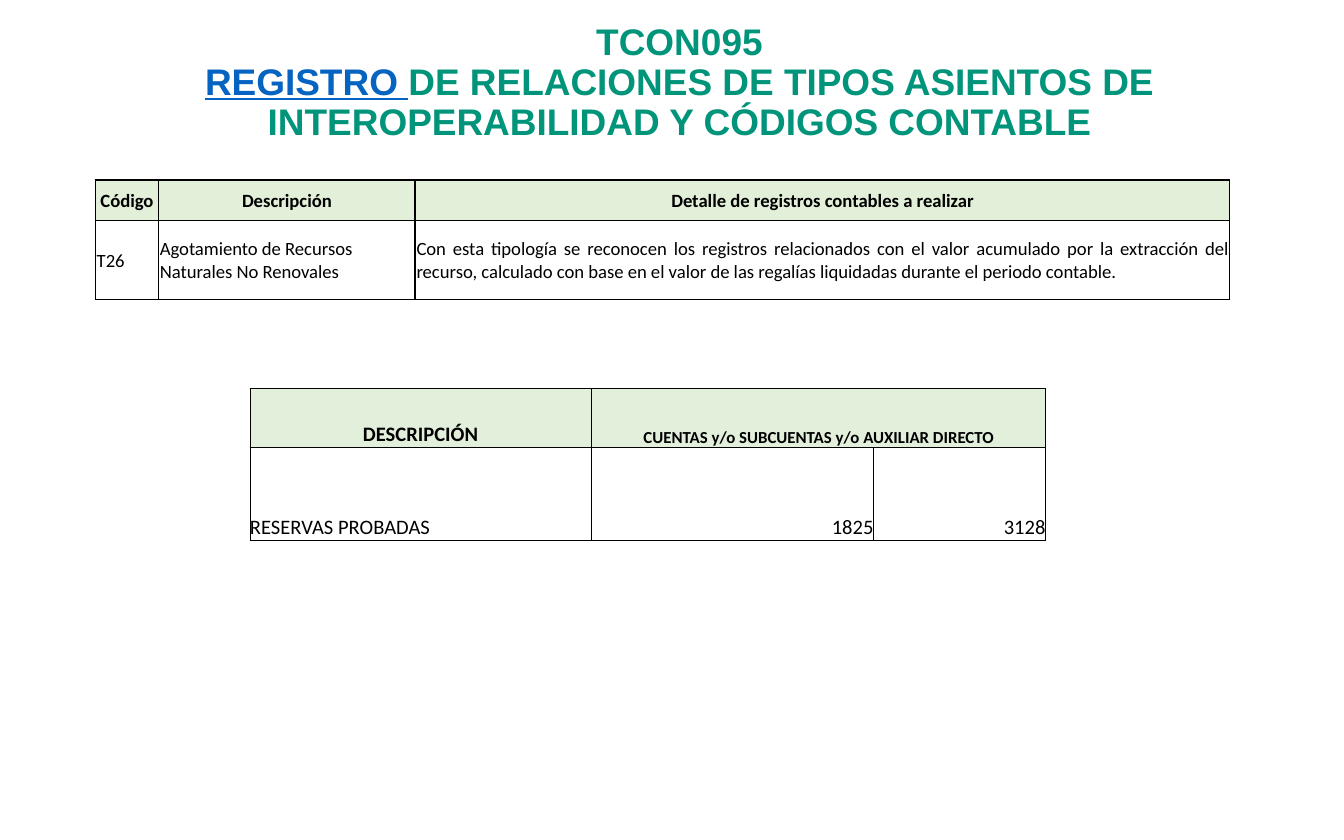
from lxml import etree
from pptx import Presentation, util as u
from pptx.dml.color import RGBColor
from pptx.enum import text
from pptx.oxml import ns

THEME = {
    "title": ("Arial", 19.8, "00947A"),
    "link": "0563C1",
    "body": ("Calibri", "000000"),
    "line": "000000",
}
WIDE, HIGH = 10, 6.25
HEAD = [
    [("TCON095", False)],
    [("REGISTRO ", True),
     ("DE RELACIONES DE TIPOS ASIENTOS DE INTEROPERABILIDAD "
      "Y CÓDIGOS CONTABLE", False)],
]
GRIDS = [
    {
        "at": (0.71, 1.34), "cols": (0.47, 1.91, 6.06), "rows": (0.3, 0.59),
        "fill": "E2EFD9", "line": 1, "pad": 0.01, "anchor": "MIDDLE",
        "sizes": [(10, 10, 10), (10, 10, 10)],
        "align": ["CCC", "LLJ"], "spans": [],
        "cells": [
            ("Código", "Descripción",
             "Detalle de registros contables a realizar"),
            ("T26", "Agotamiento de Recursos Naturales No Renovales",
             "Con esta tipología se reconocen los registros relacionados con "
             "el valor acumulado por la extracción del recurso, calculado con "
             "base en el valor de las regalías liquidadas durante el periodo "
             "contable."),
        ],
    },
    {
        "at": (1.86, 2.89), "cols": (2.54, 2.1, 1.28), "rows": (0.44, 0.69),
        "fill": "E2EFDA", "line": 0.5, "pad": 0, "anchor": "BOTTOM",
        "sizes": [(11, 9, 9), (11, 11, 11)],
        "align": ["CCC", "LRR"], "spans": [((0, 1), (0, 2))],
        "cells": [
            ("DESCRIPCIÓN", "CUENTAS y/o SUBCUENTAS y/o AUXILIAR DIRECTO", None),
            ("RESERVAS PROBADAS", "1825", "3128"),
        ],
    },
]
ALIGN = dict(zip("CLRJ", (text.PP_ALIGN.CENTER, text.PP_ALIGN.LEFT,
                          text.PP_ALIGN.RIGHT, text.PP_ALIGN.JUSTIFY)))


def style(font, face, size, color, bold):
    font.name, font.size, font.bold = face, u.Pt(size), bold
    font.color.rgb = RGBColor.from_string(color)


def border(cell, width):
    props = cell._tc.get_or_add_tcPr()
    for side in "LRTB":
        line = etree.SubElement(props, ns.qn(f"a:ln{side}"), w=str(u.Pt(width)))
        fill = etree.SubElement(line, ns.qn("a:solidFill"))
        etree.SubElement(fill, ns.qn("a:srgbClr"), val=THEME["line"])


def add_head(slide):
    box = slide.shapes.add_textbox(*map(u.Inches, (0.11, 0.26, 9.89, 1.07)))
    frame = box.text_frame
    frame.word_wrap = True
    frame.vertical_anchor = text.MSO_ANCHOR.MIDDLE
    frame.margin_top, frame.margin_bottom = 0, u.Inches(0.35)
    para = frame.paragraphs[0]
    para.alignment, para.line_spacing = ALIGN["C"], 0.9
    face, size, color = THEME["title"]
    for row, parts in enumerate(HEAD):
        if row:
            para.add_line_break()
        for words, link in parts:
            run = para.add_run()
            run.text = words
            style(run.font, face, size, THEME["link"] if link else color, True)
            run.font.underline = link


def add_grid(slide, grid):
    cols, rows = grid["cols"], grid["rows"]
    size = map(u.Inches, (*grid["at"], sum(cols), sum(rows)))
    table = slide.shapes.add_table(len(rows), len(cols), *size).table
    table.horz_banding = False
    for col, width in zip(table.columns, cols):
        col.width = u.Inches(width)
    for row, height in zip(table.rows, rows):
        row.height = u.Inches(height)
    for start, end in grid["spans"]:
        table.cell(*start).merge(table.cell(*end))
    face, color = THEME["body"]
    pad = u.Inches(grid["pad"])
    for r, line in enumerate(grid["cells"]):
        for c, words in enumerate(line):
            cell = table.cell(r, c)
            border(cell, grid["line"])
            if r == 0:
                cell.fill.solid()
                cell.fill.fore_color.rgb = RGBColor.from_string(grid["fill"])
            else:
                cell.fill.background()
            cell.margin_left = cell.margin_right = cell.margin_top = pad
            cell.margin_bottom = 0
            cell.vertical_anchor = text.MSO_ANCHOR[grid["anchor"]]
            if words is None:
                continue
            cell.text_frame.text = words
            para = cell.text_frame.paragraphs[0]
            para.alignment = ALIGN[grid["align"][r][c]]
            style(para.runs[0].font, face, grid["sizes"][r][c], color, r == 0)


def main():
    deck = Presentation()
    deck.slide_width, deck.slide_height = u.Inches(WIDE), u.Inches(HIGH)
    slide = deck.slides.add_slide(deck.slide_layouts[6])
    add_head(slide)
    for grid in GRIDS:
        add_grid(slide, grid)
    deck.save("out.pptx")


if __name__ == "__main__":
    main()
